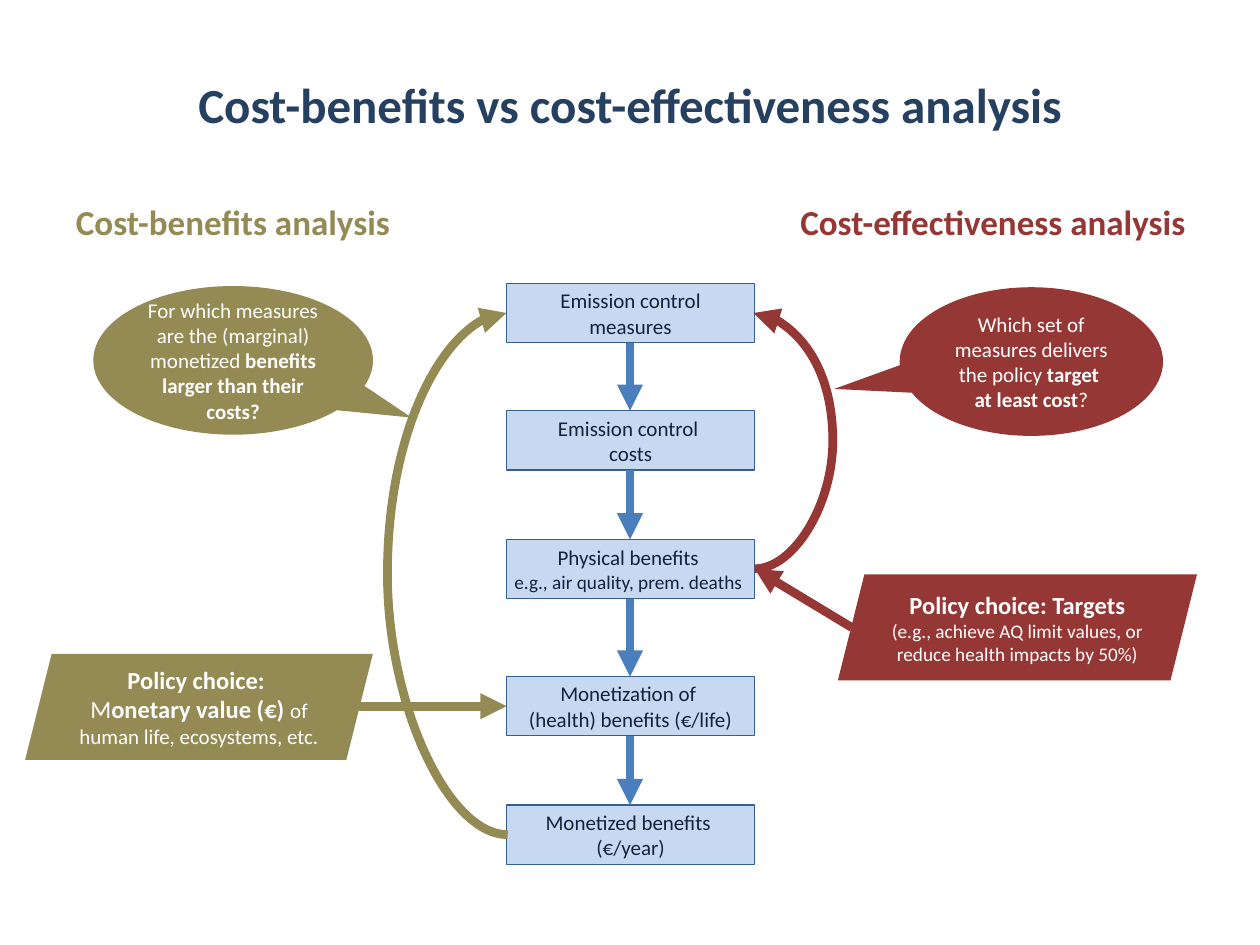
from lxml import etree
from pptx import Presentation
from pptx.dml.color import RGBColor
from pptx.enum.shapes import MSO_CONNECTOR, MSO_SHAPE
from pptx.enum.text import MSO_ANCHOR, PP_ALIGN
from pptx.oxml.ns import qn
from pptx.util import Inches, Pt

NAVY, INK, WHITE = "254061", "0F243E", "FFFFFF"
PALE_BLUE, EDGE_BLUE, ARROW_BLUE = "C6D9F1", "376092", "4B7EBC"
OLIVE, RED = "948A54", "953735"


def rgb(value):
    return RGBColor.from_string(value)


def write(shape, *paragraphs, size=12, color=INK, bold=False, wrap=True):
    """Fill a shape with centred paragraphs, each a list of (text, format) spans."""
    frame = shape.text_frame
    frame.word_wrap = wrap
    frame.vertical_anchor = MSO_ANCHOR.MIDDLE
    for index, spans in enumerate(paragraphs):
        para = frame.add_paragraph() if index else frame.paragraphs[0]
        para.alignment = PP_ALIGN.CENTER
        for text, change in spans:
            for number, line in enumerate(text.split("\n")):
                if number:
                    para.add_line_break()
                if not line:
                    continue
                span = para.add_run()
                span.text = line
                span.font.name = "Calibri"
                span.font.size = Pt(change.get("size", size))
                span.font.bold = change.get("bold", bold)
                span.font.color.rgb = rgb(color)


class Diagram:
    """Holds the arrow style and the current slide."""

    arrow_width = 5

    def __init__(self, slide):
        self.shapes = slide.shapes

    def heading(self, text, place, size, color):
        box = self.shapes.add_textbox(*map(Inches, place))
        write(box, [(text, {})], size=size, color=color, bold=True)

    def shape(self, kind, place, fill, edge=None):
        shape = self.shapes.add_shape(kind, *map(Inches, place))
        shape.shadow.inherit = False
        shape.fill.solid()
        shape.fill.fore_color.rgb = rgb(fill)
        if edge:
            shape.line.color.rgb = rgb(edge)
            shape.line.width = Pt(0.75)
        else:
            shape.line.fill.background()
        return shape

    def step(self, place, *paragraphs):
        box = self.shape(MSO_SHAPE.RECTANGLE, place, PALE_BLUE, EDGE_BLUE)
        write(box, *paragraphs, wrap=False)

    def callout(self, place, pointer, fill, spans):
        bubble = self.shape(MSO_SHAPE.OVAL_CALLOUT, place, fill)
        for index, value in enumerate(pointer):
            bubble.adjustments[index] = value
        write(bubble, spans, color=WHITE)

    def choice(self, place, fill, spans):
        write(self.shape(MSO_SHAPE.PARALLELOGRAM, place, fill), spans,
              size=14, color=WHITE, bold=True)

    def arrow(self, start, end, color, kind=MSO_CONNECTOR.STRAIGHT):
        arrow = self.shapes.add_connector(kind, *map(Inches, start + end))
        arrow.line.color.rgb = rgb(color)
        arrow.line.width = Pt(self.arrow_width)
        etree.SubElement(arrow.line._get_or_add_ln(), qn("a:tailEnd"), type="triangle")
        etree.SubElement(arrow._element.spPr, qn("a:effectLst"))
        return arrow

    def loop(self, start, end, bulge, color):
        """Curved arrow whose middle lies at the horizontal position bulge."""
        arrow = self.arrow(start, end, color, MSO_CONNECTOR.CURVE)
        ratio = (bulge - start[0]) / (end[0] - start[0])
        geometry = arrow._element.spPr.find(qn("a:prstGeom"))
        guides = geometry.find(qn("a:avLst"))
        if guides is None:
            guides = etree.SubElement(geometry, qn("a:avLst"))
        etree.SubElement(guides, qn("a:gd"), name="adj1", fmla=f"val {round(ratio * 100000)}")


def main():
    deck = Presentation()
    deck.slide_width, deck.slide_height = Inches(10), Inches(7.5)
    diagram = Diagram(deck.slides.add_slide(deck.slide_layouts[6]))

    diagram.heading("Cost-benefits vs cost-effectiveness analysis", (0.5, 0.2, 9, 1.25), 28, NAVY)
    diagram.heading("Cost-benefits analysis", (0.27, 1.48, 3.16, 0.56), 20, OLIVE)
    diagram.heading("Cost-effectiveness analysis", (5.39, 1.48, 4.98, 0.56), 20, RED)

    left, width, height = 4.02, 1.97, 0.47
    right, middle = left + width, 5
    steps = [
        (2.25, [[("Emission control", {})], [("measures", {})]]),
        (3.26, [[("Emission control \ncosts", {})]]),
        (4.28, [[("Physical benefits \n", {}),
                 ("e.g., air quality, prem. deaths ", {"size": 11})]]),
        (5.37, [[("Monetization of \n(health) benefits (€/life)", {})]]),
        (6.39, [[("Monetized benefits \n(€/year)", {})]]),
    ]
    tops = [top for top, _ in steps]
    for top, paragraphs in steps:
        diagram.step((left, top, width, height), *paragraphs)
    for top, following in zip(tops, tops[1:]):
        diagram.arrow((middle, top + height), (middle, following), ARROW_BLUE)
    centers = [top + height / 2 for top in tops]
    measures, _, physical, monetization, monetized = centers

    plain = {"bold": False}
    diagram.callout((0.74, 2.27, 2.22, 1.18), (0.638, 0.385), OLIVE, [
        ("For which measures are the (marginal) monetized ", {}),
        ("benefits larger than their costs?", {"bold": True})])
    diagram.choice((0.2, 5.19, 2.76, 0.84), OLIVE, [
        ("Policy choice: \n", {}), ("M", plain), ("onetary value (€) ", {}),
        ("of human life, ecosystems, etc.", {"size": 12, "bold": False})])
    diagram.loop((left + 0.01, monetized), (left, measures), 3.06, OLIVE)
    diagram.arrow((2.85, monetization), (left, monetization), OLIVE)

    diagram.callout((7.14, 2.28, 2.09, 1.18), (-0.749, 0.184), RED, [
        ("Which set of measures delivers the policy ", {}),
        ("target \nat least cost", {"bold": True}), ("?", {})])
    diagram.choice((6.65, 4.56, 2.85, 0.84), RED, [
        ("Policy choice: Targets\n", {}),
        ("(e.g., achieve AQ limit values, or reduce health impacts by 50%)",
         {"size": 11, "bold": False})])
    diagram.loop((right, physical), (right - 0.01, measures), 6.62, RED)
    diagram.arrow((6.76, 4.98), (right, physical), RED)

    deck.save("out.pptx")


if __name__ == "__main__":
    main()
